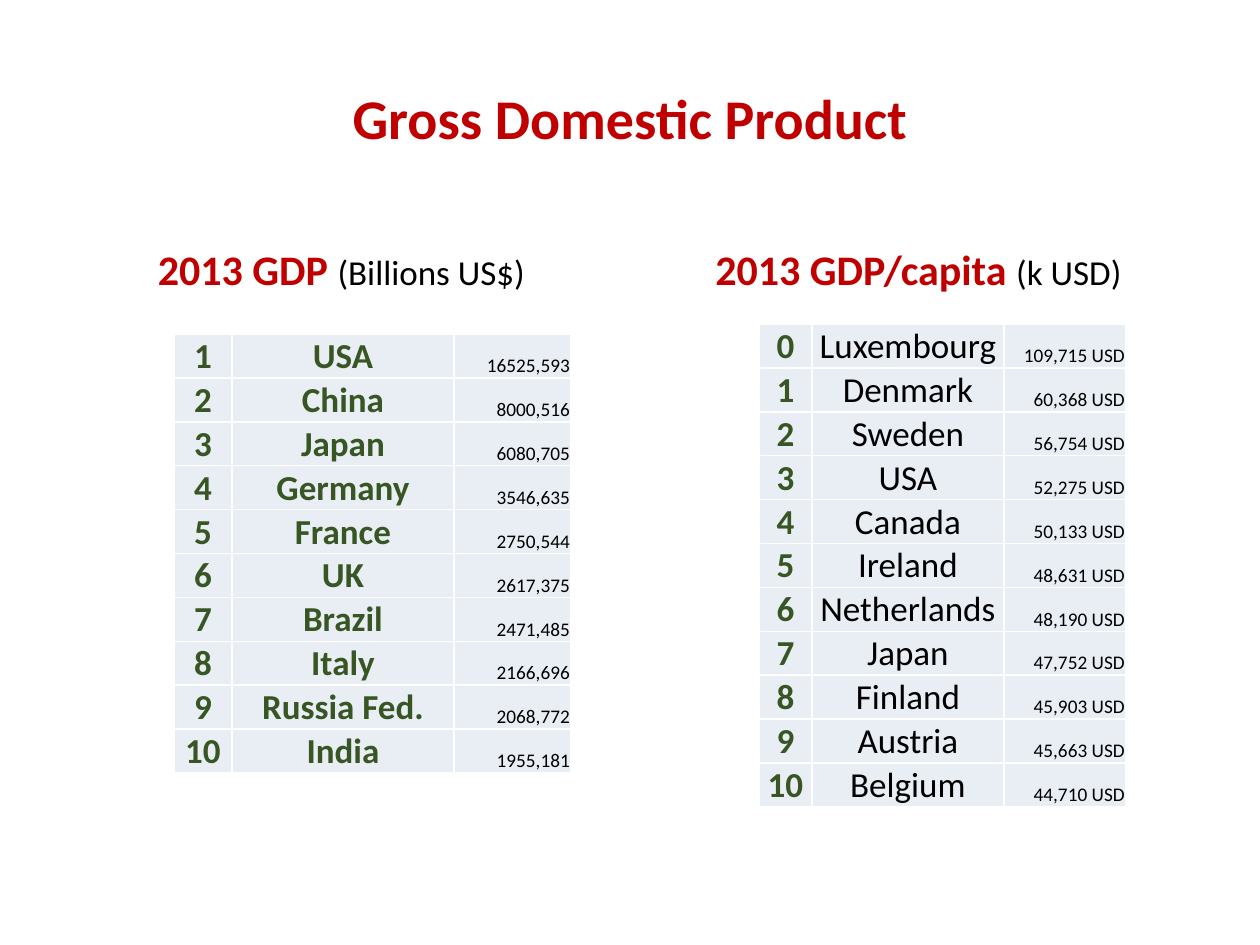
from lxml import etree
from pptx import Presentation
from pptx import util as u
from pptx.dml.color import RGBColor
from pptx.enum import text
from pptx.oxml import ns

PX = u.Inches(1) / 126
COLORS = {"red": "C00000", "green": "375623", "black": "000000", "cell": "E9EDF4", "line": "FFFFFF"}
COMPARISON_LAYOUT = 4

GDP = [
    ("USA", "16525,593"), ("China", "8000,516"), ("Japan", "6080,705"),
    ("Germany", "3546,635"), ("France", "2750,544"), ("UK", "2617,375"),
    ("Brazil", "2471,485"), ("Italy", "2166,696"), ("Russia Fed.", "2068,772"),
    ("India", "1955,181"),
]
GDP_PER_CAPITA = [
    ("Luxembourg", "109,715"), ("Denmark", "60,368"), ("Sweden", "56,754"),
    ("USA", "52,275"), ("Canada", "50,133"), ("Ireland", "48,631"),
    ("Netherlands", "48,190"), ("Japan", "47,752"), ("Finland", "45,903"),
    ("Austria", "45,663"), ("Belgium", "44,710"),
]


def px(length):
    return u.Emu(round(length * PX))


def rgb(name):
    return RGBColor.from_string(COLORS[name])


def write(paragraph, words, size=20, color="black", bold=False, align="CENTER"):
    paragraph.alignment = getattr(text.PP_ALIGN, align)
    run = paragraph.add_run()
    run.text = words
    run.font.name = "Calibri"
    run.font.size = u.Pt(size)
    run.font.bold = bold
    run.font.color.rgb = rgb(color)


class Deck:
    def __init__(self, width, height):
        self.presentation = Presentation()
        self.presentation.slide_width = px(width)
        self.presentation.slide_height = px(height)
        layout = self.presentation.slide_layouts[COMPARISON_LAYOUT]
        self.slide = self.presentation.slides.add_slide(layout)
        self.places = {p.placeholder_format.idx: p for p in self.slide.placeholders}

    def heading(self, idx, box, anchor, *parts):
        place = self.places.pop(idx)
        place.left, place.top, place.width, place.height = map(px, box)
        place.text_frame.vertical_anchor = anchor
        for words, style in parts:
            write(place.text_frame.paragraphs[0], words, **style)

    def border(self, cell):
        properties = cell._tc.get_or_add_tcPr()
        for side in ("lnL", "lnR", "lnT", "lnB"):
            line = etree.SubElement(properties, ns.qn(f"a:{side}"), w=str(u.Pt(1)))
            fill = etree.SubElement(line, ns.qn("a:solidFill"))
            etree.SubElement(fill, ns.qn("a:srgbClr"), val=COLORS["line"])

    def cell(self, cell, words, **style):
        self.border(cell)
        cell.fill.solid()
        cell.fill.fore_color.rgb = rgb("cell")
        cell.margin_left = cell.margin_right = cell.margin_top = px(1)
        cell.margin_bottom = 0
        cell.vertical_anchor = text.MSO_ANCHOR.BOTTOM
        write(cell.text_frame.paragraphs[0], words, **style)

    def ranking(self, left, top, widths, height, entries, first, unit, country_style):
        frame = self.slide.shapes.add_table(
            len(entries), len(widths), px(left), px(top), px(sum(widths)), px(height))
        table = frame.table
        table.first_row = table.horz_banding = False
        for column, width in zip(table.columns, widths):
            column.width = px(width)
        for row, (country, value) in enumerate(entries):
            table.rows[row].height = px(37)
            self.cell(table.cell(row, 0), str(first + row), color="green", bold=True)
            self.cell(table.cell(row, 1), country, **country_style)
            self.cell(table.cell(row, 2), value + unit, size=11, align="RIGHT")
        frame.height = px(height)

    def save(self):
        for unused in self.places.values():
            unused.element.getparent().remove(unused.element)
        self.presentation.save("out.pptx")


def main():
    deck = Deck(1260, 945)
    middle, bottom = text.MSO_ANCHOR.MIDDLE, text.MSO_ANCHOR.BOTTOM
    strong = dict(size=24, color="red", bold=True)
    deck.heading(0, (63, 38, 1134, 158), middle,
                 ("Gross Domestic Product", dict(strong, size=32)))
    deck.heading(1, (63, 212, 557, 88), bottom,
                 ("2013 GDP ", strong), ("(Billions US$)", {}))
    deck.heading(3, (640, 212, 557, 88), bottom,
                 ("2013 GDP/capita ", strong), ("(k USD)", {}))
    deck.ranking(174, 334, (58, 222, 117), 431, GDP, 1, "",
                 dict(color="green", bold=True))
    deck.ranking(759, 324, (53, 192, 122), 474, GDP_PER_CAPITA, 0, " USD", {})
    deck.save()


if __name__ == "__main__":
    main()
